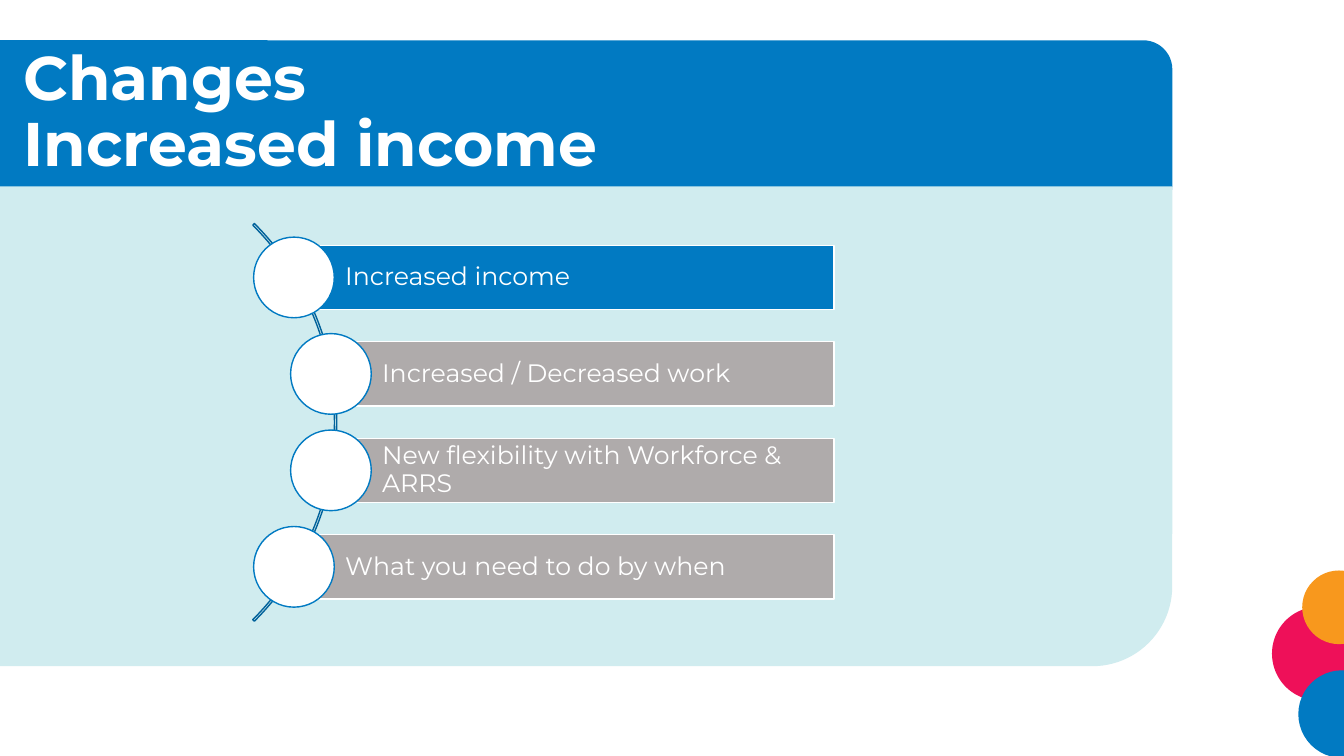
from dataclasses import dataclass

import pptx
import pptx.dml.color
import pptx.enum.shapes
import pptx.enum.text
import pptx.util

Pt = pptx.util.Pt
RGB = pptx.dml.color.RGBColor.from_string
PRESET = pptx.enum.shapes.MSO_SHAPE
TEXT = pptx.enum.text


@dataclass(frozen=True)
class Theme:
    font: str = "Montserrat"
    title_size: int = 44
    item_size: int = 18
    blue: str = "017AC2"
    dark_blue: str = "01629B"
    pale: str = "D0ECEF"
    pink: str = "EE1059"
    orange: str = "F8981D"
    grey: str = "AFABAB"
    white: str = "FFFFFF"


theme = Theme()

deck = pptx.Presentation()
deck.slide_width, deck.slide_height = Pt(960), Pt(540)
slide = deck.slides.add_slide(deck.slide_layouts[5])


def add_preset(preset, left, top, width, height, fill=None, line=None):
    shape = slide.shapes.add_shape(preset, Pt(left), Pt(top), Pt(width), Pt(height))
    shape.shadow.inherit = False
    if fill:
        shape.fill.solid()
        shape.fill.fore_color.rgb = RGB(fill)
    else:
        shape.fill.background()
    if line:
        shape.line.color.rgb = RGB(line)
        shape.line.width = Pt(1)
    else:
        shape.line.fill.background()
    return shape


def add_styled_run(paragraph, text, size, bold=False):
    run = paragraph.add_run()
    run.text = text
    run.font.name = theme.font
    run.font.size = Pt(size)
    run.font.bold = bold
    run.font.color.rgb = RGB(theme.white)


# Title band, content panel and corner dots
add_preset(PRESET.ROUNDED_RECTANGLE, -28.8, 28.8, 866.2, 124.6, theme.blue)
panel = add_preset(PRESET.ROUND_1_RECTANGLE, -7.9, 133.2, 845.3, 342.7, theme.pale)
panel.element.spPr.get_or_add_xfrm().set("flipV", "1")
for left, top, diameter, color in [
    (908.6, 433.4, 67, theme.pink),
    (927.4, 478.8, 62.6, theme.blue),
    (930.2, 407.5, 52.6, theme.orange),
]:
    add_preset(PRESET.OVAL, left, top, diameter, diameter, color)

# Title, brought in front of its band
title = slide.shapes.title
slide.shapes.element.append(title.element)
title.left, title.top, title.width, title.height = Pt(9.4), Pt(28.8), Pt(828), Pt(104.4)
title.text_frame.auto_size = TEXT.MSO_AUTO_SIZE.NONE
title.text_frame.word_wrap = True
title.text_frame.vertical_anchor = TEXT.MSO_ANCHOR.MIDDLE
heading = title.text_frame.paragraphs[0]
heading.alignment = TEXT.PP_ALIGN.LEFT
heading.line_spacing = 0.9
add_styled_run(heading, "Changes", theme.title_size, bold=True)
heading.add_line_break()
add_styled_run(heading, "Increased income", theme.title_size, bold=True)

# Agenda: bars strung along an arc, each starting at the centre of its circle
arc = add_preset(PRESET.BLOCK_ARC, -161.3, 100.8, 401.8, 401.8, line=theme.dark_blue)
arc.adjustments[0], arc.adjustments[1], arc.adjustments[2] = 189, 27, 0.004

OUTER, INNER, BAR_RIGHT = 210, 236.4, 595.9
FIRST_TOP, PITCH, BAR_HEIGHT, CIRCLE = 175.2, 68.9, 46, 57.6
agenda = [
    ("Increased income", OUTER, theme.blue),
    ("Increased / Decreased work", INNER, theme.grey),
    ("New flexibility with Workforce & ARRS", INNER, theme.grey),
    ("What you need to do by when", OUTER, theme.grey),
]
for index, (topic, left, color) in enumerate(agenda):
    top = FIRST_TOP + index * PITCH
    bar = add_preset(PRESET.RECTANGLE, left, top, BAR_RIGHT - left, BAR_HEIGHT,
                     color, theme.white)
    frame = bar.text_frame
    frame.word_wrap = True
    frame.vertical_anchor = TEXT.MSO_ANCHOR.MIDDLE
    frame.margin_left = Pt(36.6)
    frame.margin_right = frame.margin_top = frame.margin_bottom = Pt(3.6)
    label = frame.paragraphs[0]
    label.alignment = TEXT.PP_ALIGN.LEFT
    label.line_spacing = 0.9
    add_styled_run(label, topic, theme.item_size)
    add_preset(PRESET.OVAL, left - CIRCLE / 2, top + (BAR_HEIGHT - CIRCLE) / 2,
               CIRCLE, CIRCLE, theme.white, theme.blue)

deck.save("out.pptx")
